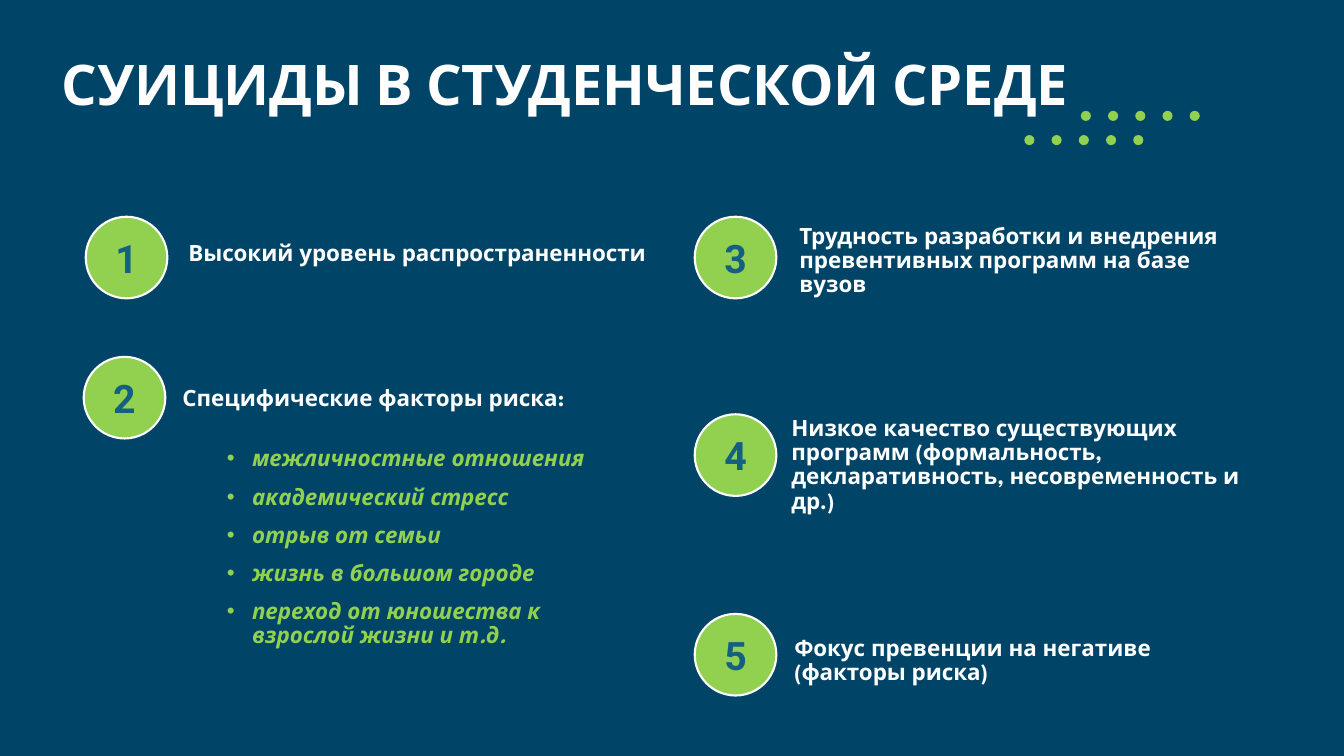
from dataclasses import dataclass

from lxml.etree import SubElement
from pptx import Presentation
from pptx.dml.color import RGBColor as Rgb
from pptx.enum.shapes import MSO_SHAPE as Shape
from pptx.enum.text import MSO_ANCHOR as Anchor, MSO_AUTO_SIZE as AutoSize, PP_ALIGN as Align
from pptx.oxml.ns import qn
from pptx.util import Inches, Pt


@dataclass(frozen=True)
class Theme:
    navy: Rgb = Rgb.from_string("004568")
    green: Rgb = Rgb.from_string("92D050")
    blue: Rgb = Rgb.from_string("156082")
    white: Rgb = Rgb.from_string("FFFFFF")
    title_font: str = "Cabin"
    text_font: str = "League Spartan"
    number_font: str = "Roboto"
    title_size: int = 40
    number_size: int = 28
    text_size: int = 16


def apply(target, values):
    for attribute, value in values.items():
        setattr(target, attribute, value)


class SlideBuilder:
    def __init__(self, slide, theme):
        self.slide = slide
        self.theme = theme
        background = slide.background.fill
        background.solid()
        background.fore_color.rgb = theme.navy

    def format_font(self, paragraph, name, size, color, italic=False):
        apply(paragraph.font, {"name": name, "size": Pt(size), "bold": True, "italic": italic})
        paragraph.font.color.rgb = color

    def format_frame(self, frame, anchor, margins):
        left, top, right, bottom = map(Inches, margins)
        apply(frame, {
            "word_wrap": True, "auto_size": AutoSize.NONE, "vertical_anchor": anchor,
            "margin_left": left, "margin_top": top,
            "margin_right": right, "margin_bottom": bottom,
        })

    def place(self, placeholder, left, top, width, height):
        apply(placeholder, {"left": Inches(left), "top": Inches(top),
                            "width": Inches(width), "height": Inches(height)})

    def title(self, text, *box):
        heading = self.slide.shapes.title
        self.place(heading, *box)
        heading.text = text
        self.format_frame(heading.text_frame, Anchor.MIDDLE, [0.13] * 4)
        line = heading.text_frame.paragraphs[0]
        apply(line, {"alignment": Align.LEFT, "line_spacing": 0.9})
        self.format_font(line, self.theme.title_font, self.theme.title_size, self.theme.white)

    def bullets(self, items, *box):
        body = self.slide.placeholders[1]
        self.place(body, *box)
        body.text = "\n".join(items)
        self.format_frame(body.text_frame, Anchor.TOP, (0.1, 0, 0.1, 0.1))
        for index, item in enumerate(body.text_frame.paragraphs):
            apply(item, {"alignment": Align.LEFT, "line_spacing": 0.9,
                         "space_before": Pt(10 if index else 0)})
            properties = item._p.get_or_add_pPr()
            properties.set("marL", str(Inches(0.25)))
            properties.set("indent", str(-Inches(0.25)))
            SubElement(properties, qn("a:buFont"), typeface="Arial")
            SubElement(properties, qn("a:buChar"), char="•")
            self.format_font(item, self.theme.text_font, self.theme.text_size,
                             self.theme.green, italic=True)

    def circle(self, left, top, size):
        disc = self.slide.shapes.add_shape(
            Shape.OVAL, Inches(left), Inches(top), Inches(size), Inches(size))
        disc.shadow.inherit = False
        disc.fill.solid()
        disc.fill.fore_color.rgb = self.theme.green
        return disc

    def dot_row(self, left, top, count=5, pitch=0.27):
        for column in range(count):
            self.circle(left + column * pitch, top, 0.1).line.fill.background()

    def badge(self, number, left, top):
        badge = self.circle(left, top, 0.81)
        badge.line.color.rgb = self.theme.white
        badge.line.width = Pt(1.5)
        self.format_frame(badge.text_frame, Anchor.MIDDLE, (0.1, 0.05, 0.1, 0.05))
        digit = badge.text_frame.paragraphs[0]
        digit.text = str(number)
        digit.alignment = Align.CENTER
        self.format_font(digit, self.theme.number_font, self.theme.number_size, self.theme.blue)

    def statement(self, text, left, top, width):
        box = self.slide.shapes.add_textbox(
            Inches(left), Inches(top), Inches(width), Inches(0.37))
        self.format_frame(box.text_frame, Anchor.TOP, (0.1, 0, 0.1, 0.1))
        line = box.text_frame.paragraphs[0]
        line.text = text
        line.line_spacing = 0.9
        self.format_font(line, self.theme.text_font, self.theme.text_size, self.theme.white)


# Each problem: text, badge left and top, text left, top and width
PROBLEMS = [
    ("Высокий уровень распространенности", (0.85, 2.15), (1.77, 2.4, 5.18)),
    ("Специфические факторы риска:", (0.83, 3.54), (1.71, 3.84, 5.18)),
    ("Трудность разработки и внедрения превентивных программ на базе вузов",
     (6.89, 2.15), (7.83, 2.23, 4.69)),
    ("Низкое качество существующих программ (формальность, декларативность, "
     "несовременность и др.)", (6.89, 4.11), (7.75, 4.14, 4.71)),
    ("Фокус превенции на негативе (факторы риска)", (6.89, 6.09), (7.78, 6.32, 4.77)),
]
RISK_FACTORS = [
    "межличностные отношения",
    "академический стресс",
    "отрыв от семьи",
    "жизнь в большом городе",
    "переход от юношества к взрослой жизни и т.д.",
]


def main():
    presentation = Presentation()
    presentation.slide_width = Inches(13.33)
    presentation.slide_height = Inches(7.5)
    builder = SlideBuilder(
        presentation.slides.add_slide(presentation.slide_layouts[1]), Theme())

    # Heading and its dotted ornament
    builder.title("СУИЦИДЫ В СТУДЕНЧЕСКОЙ СРЕДЕ", 0.48, 0.37, 10.84, 0.99)
    builder.dot_row(10.72, 1.1)
    builder.dot_row(10.16, 1.34)

    # Numbered problems
    for number, (text, badge_spot, text_spot) in enumerate(PROBLEMS, start=1):
        builder.badge(number, *badge_spot)
        builder.statement(text, *text_spot)

    # Risk factors under the second problem
    builder.bullets(RISK_FACTORS, 2.15, 4.44, 4.33, 2.1)

    presentation.save("out.pptx")


if __name__ == "__main__":
    main()
